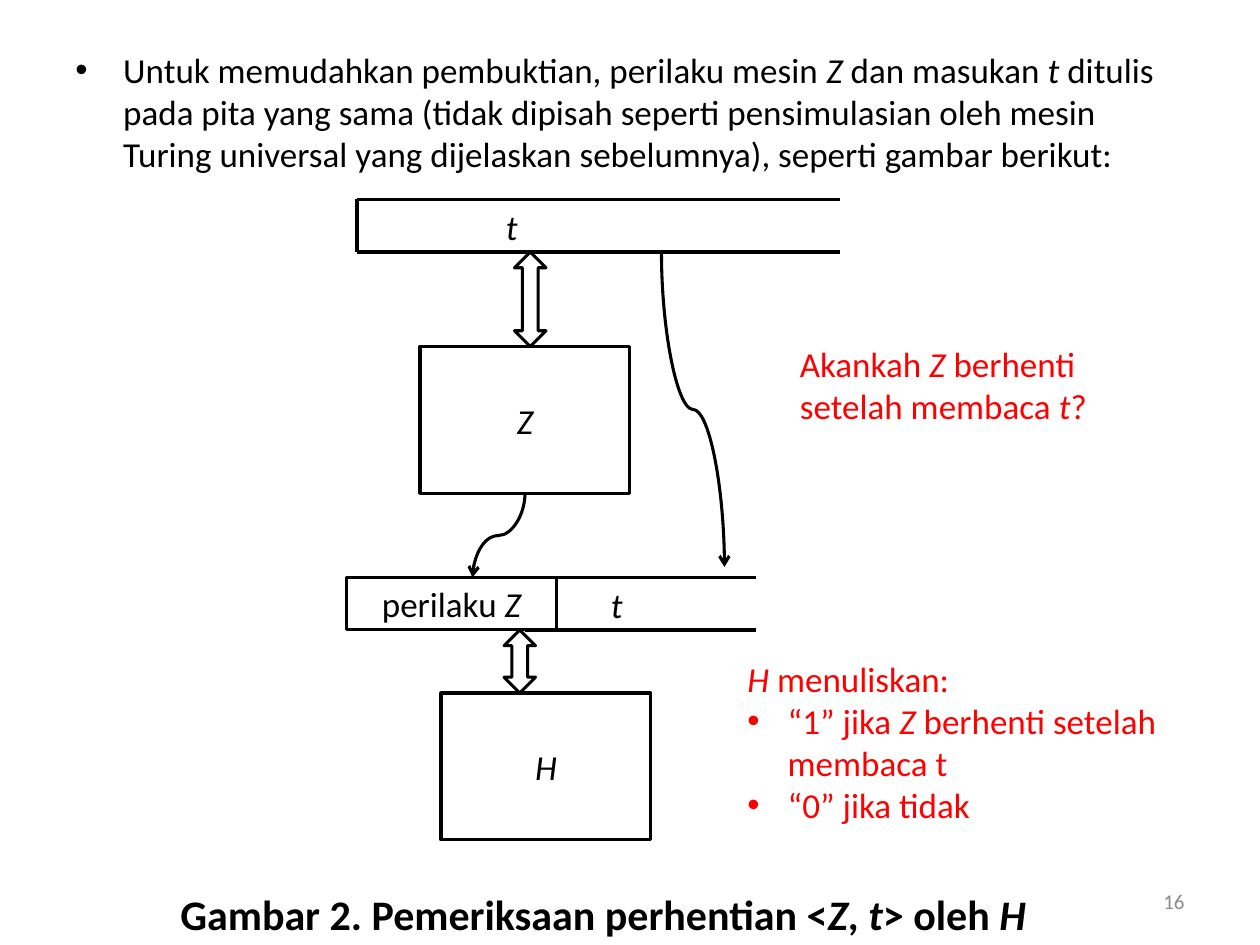
"""Builds the slide on checking whether machine Z halts on input t, using machine H."""
from lxml import etree
from pptx import Presentation
from pptx import util as u
from pptx.dml.color import RGBColor
from pptx.enum import shapes, text
from pptx.oxml.ns import qn

BLACK = RGBColor(0x00, 0x00, 0x00)
RED = RGBColor(0xFF, 0x00, 0x00)
GRAY = RGBColor(0x8C, 0x8C, 0x8C)
FONT = "Calibri"
COLUMNS, ROWS = 120, 90
WIDTH, HEIGHT = u.Inches(10), u.Inches(7.5)
LINE = 1.75
RECT, ARROW = shapes.MSO_SHAPE.RECTANGLE, shapes.MSO_SHAPE.UP_DOWN_ARROW

INTRO = [
    "Untuk memudahkan pembuktian, perilaku mesin *Z* dan masukan *t* ditulis pada pita "
    "yang sama (tidak dipisah seperti pensimulasian oleh mesin Turing universal yang "
    "dijelaskan sebelumnya), seperti gambar berikut:"
]
QUESTION = ["Akankah *Z* berhenti", "setelah membaca *t*?"]
ANSWER = ["*H* menuliskan:", "“1” jika *Z* berhenti setelah membaca t", "“0” jika tidak"]
CAPTION = ["Gambar 2. Pemeriksaan perhentian <*Z*, *t*> oleh *H*"]

SHAPES = [
    (RECT, (40, 33, 20, 14), "*Z*"),
    (ARROW, (49, 24, 3, 9), ""),
    (RECT, (33, 55, 20, 5), "perilaku *Z*"),
    (RECT, (42, 66, 20, 14), "*H*"),
    (ARROW, (48, 60, 3, 6), ""),
]
TAPE_LINES = [
    ((34, 19), (80, 19), LINE),
    ((34, 19), (34, 24), LINE),
    ((34, 24), (80, 24), LINE),
    ((50, 60), (72, 60), LINE),
    ((52, 55), (72, 55), LINE),
    ((53, 55), (53, 60), 0.75),
]
CURVES = [((50, 47), (45, 55)), ((63, 24), (69, 54))]
TEXTS = [
    (INTRO, (6, 4, 108, 81), dict(bullets_from=0, indent=0.38)),
    (["16"], (86, 83.4, 28, 4.8), dict(size=12, color=GRAY, align=text.PP_ALIGN.RIGHT,
                                       anchor=text.MSO_ANCHOR.MIDDLE)),
    (["*t*"], (47, 19, 3.6, 5.3), dict(wrap=False)),
    (["*t*"], (57, 55, 11.2, 5.3), {}),
    (QUESTION, (75, 32, 30, 9.2), dict(color=RED, wrap=False)),
    (ANSWER, (70, 62, 45, 17.4), dict(color=RED, bullets_from=1, indent=0.32)),
    (CAPTION, (16, 84, 86.4, 6), dict(size=24, bold=True, wrap=False)),
]


def across(columns):
    return round(WIDTH * columns / COLUMNS)


def down(rows):
    return round(HEIGHT * rows / ROWS)


def place(area):
    left, top, width, height = area
    return across(left), down(top), across(width), down(height)


def add_bullet(para, indent):
    properties = para._p.get_or_add_pPr()
    properties.set("marL", str(u.Inches(indent)))
    properties.set("indent", str(-u.Inches(indent)))
    etree.SubElement(properties, qn("a:buFont"), typeface="Arial")
    etree.SubElement(properties, qn("a:buChar"), char="•")


def write(box, lines, size=20, color=BLACK, bold=False, wrap=True, indent=0,
          bullets_from=None, align=text.PP_ALIGN.LEFT, anchor=text.MSO_ANCHOR.TOP):
    """Write lines into a box; asterisks enclose italic spans."""
    frame = box.text_frame
    frame.word_wrap = wrap
    frame.vertical_anchor = anchor
    for index, line in enumerate(lines):
        para = frame.add_paragraph() if index else frame.paragraphs[0]
        para.alignment = align
        if bullets_from is not None and index >= bullets_from:
            add_bullet(para, indent)
        for number, part in enumerate(line.split("*")):
            if part:
                span = para.add_run()
                span.text = part
                font = span.font
                font.name, font.size, font.bold = FONT, u.Pt(size), bold
                font.italic = number % 2 == 1
                font.color.rgb = color


def add_line(page, start, end, weight=LINE, kind=shapes.MSO_CONNECTOR.STRAIGHT):
    line = page.shapes.add_connector(
        kind, across(start[0]), down(start[1]), across(end[0]), down(end[1]))
    line.line.color.rgb = BLACK
    line.line.width = u.Pt(weight)
    etree.SubElement(line._element.spPr, qn("a:effectLst"))
    return line


def add_curve(page, start, end):
    """Add a curved arrow that leaves and arrives vertically."""
    middle_x, middle_y = (start[0] + end[0]) / 2, (start[1] + end[1]) / 2
    half_width, half_height = (end[1] - start[1]) / 2, abs(end[0] - start[0]) / 2
    goes_right = end[0] > start[0]
    side = -half_width if goes_right else half_width
    curve = add_line(page, (middle_x - side, middle_y - half_height),
                     (middle_x + side, middle_y + half_height),
                     kind=shapes.MSO_CONNECTOR.CURVE)
    angle = 270 if goes_right else 90
    curve._element.spPr.find(qn("a:xfrm")).set("rot", str(angle * 60000))
    outline = curve._element.spPr.find(qn("a:ln"))
    etree.SubElement(outline, qn("a:tailEnd"), type="arrow")


def main():
    deck = Presentation()
    deck.slide_width, deck.slide_height = WIDTH, HEIGHT
    page = deck.slides.add_slide(deck.slide_layouts[6])
    for kind, area, label in SHAPES:
        shape = page.shapes.add_shape(kind, *place(area))
        shape.shadow.inherit = False
        shape.fill.background()
        shape.line.color.rgb = BLACK
        shape.line.width = u.Pt(LINE)
        if label:
            write(shape, [label], align=text.PP_ALIGN.CENTER, anchor=text.MSO_ANCHOR.MIDDLE)
    for start, end, weight in TAPE_LINES:
        add_line(page, start, end, weight)
    for start, end in CURVES:
        add_curve(page, start, end)
    for lines, area, style in TEXTS:
        write(page.shapes.add_textbox(*place(area)), lines, **style)
    deck.save("out.pptx")


if __name__ == "__main__":
    main()
